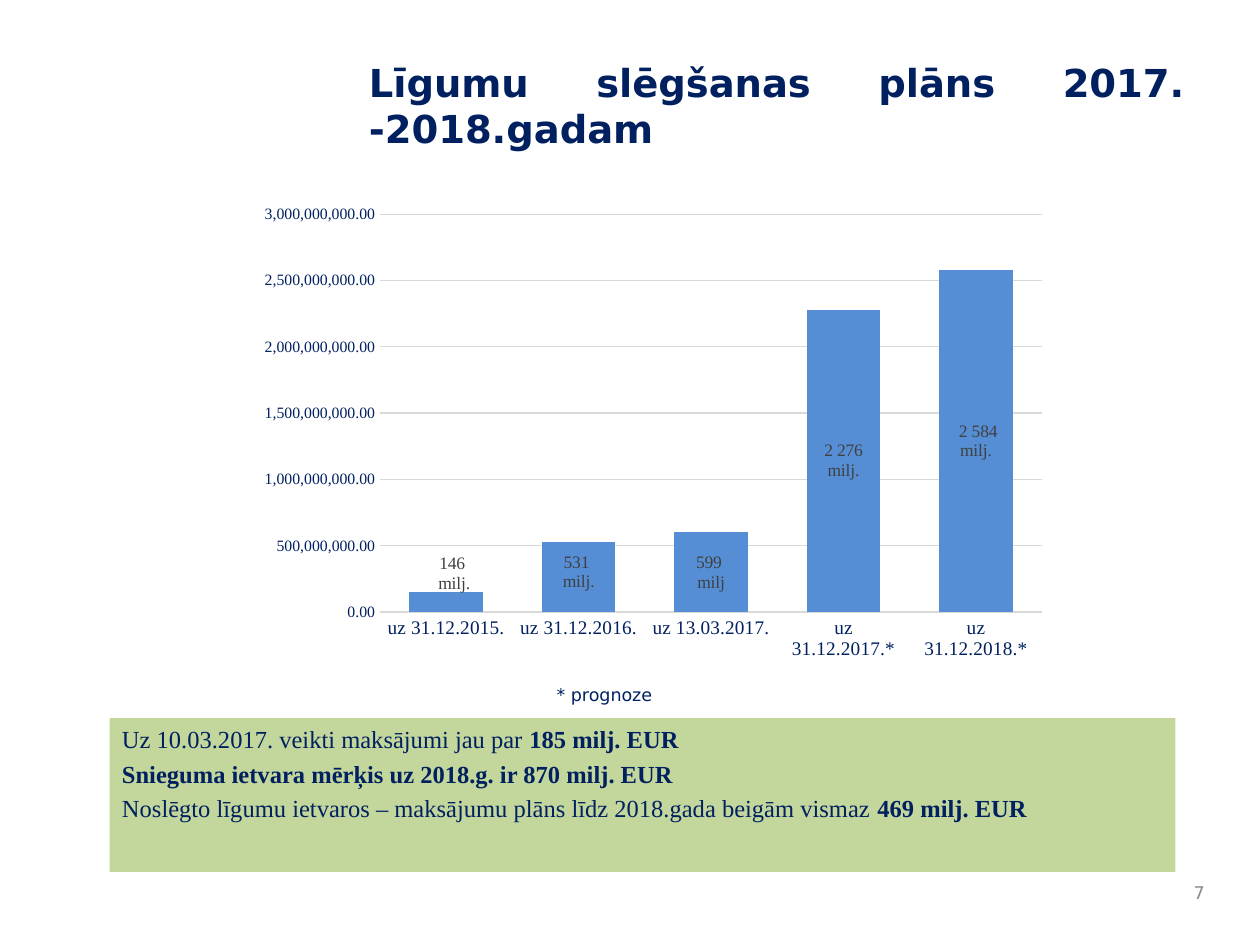
from dataclasses import dataclass
from lxml import etree
from pptx import Presentation
from pptx.chart.data import CategoryChartData
from pptx.dml.color import RGBColor
from pptx.enum.chart import XL_CHART_TYPE, XL_LABEL_POSITION, XL_TICK_MARK
from pptx.enum.shapes import MSO_SHAPE
from pptx.enum.text import MSO_ANCHOR, PP_ALIGN
from pptx.oxml.ns import qn
from pptx.util import Inches, Pt

STACKED = XL_CHART_TYPE.COLUMN_STACKED
CENTER = XL_LABEL_POSITION.CENTER
NO_TICK = XL_TICK_MARK.NONE
RECT = MSO_SHAPE.RECTANGLE
TOP, MIDDLE = MSO_ANCHOR.TOP, MSO_ANCHOR.MIDDLE
LEFT, RIGHT, JUSTIFY = PP_ALIGN.LEFT, PP_ALIGN.RIGHT, PP_ALIGN.JUSTIFY
C15 = "http://schemas.microsoft.com/office/drawing/2012/chart"
LEADER = "{CE6537A1-D6FC-4f65-9D91-7224C49458BB}"


@dataclass(frozen=True)
class Theme:
    sans: str = "DejaVu Sans"
    serif: str = "Times New Roman"
    navy: str = "002060"
    blue: str = "558ED5"
    green: str = "C3D69B"
    gray: str = "898989"
    dark: str = "404040"
    grid: str = "D9D9D9"
    title: float = 22
    body: float = 14
    label: float = 11
    small: float = 10
    tick: float = 9


class Deck:
    def __init__(self, theme):
        self.theme = theme
        self.prs = Presentation()
        self.prs.slide_width, self.prs.slide_height = Inches(10), Inches(7.5)
        self.slide = self.prs.slides.add_slide(self.prs.slide_layouts[6])

    def style(self, font, face, size, color, bold=False):
        font.name, font.size, font.bold = face, Pt(size), bold
        font.color.rgb = RGBColor.from_string(color)

    def fill(self, frame, paras, face, size, color, bold=False, align=LEFT, anchor=TOP):
        frame.word_wrap = True
        frame.vertical_anchor = anchor
        for i, runs in enumerate(paras):
            para = frame.paragraphs[0] if i == 0 else frame.add_paragraph()
            para.alignment = align
            if i:
                para.space_before = Pt(2.8)
            self.style(para.font, face, size, color, bold)
            for text, strong in runs:
                run = para.add_run()
                run.text = text
                if strong:
                    run.font.bold = True

    def text(self, box, words, size, color, **opts):
        shape = self.slide.shapes.add_textbox(*map(Inches, box))
        self.fill(shape.text_frame, [[(words, False)]], self.theme.sans, size, color, **opts)

    def panel(self, box, paras):
        t = self.theme
        shape = self.slide.shapes.add_shape(RECT, *map(Inches, box))
        shape.shadow.inherit = False
        shape.fill.solid()
        shape.fill.fore_color.rgb = RGBColor.from_string(t.green)
        shape.line.fill.background()
        self.fill(shape.text_frame, paras, t.serif, t.body, t.navy)

    def layout(self, parent, index, **parts):
        old = parent.find(qn("c:layout"))
        if old is not None:
            parent.remove(old)
        outer = etree.Element(qn("c:layout"))
        manual = etree.SubElement(outer, qn("c:manualLayout"))
        for name, value in parts.items():
            etree.SubElement(manual, qn(f"c:{name}")).set("val", str(value))
        parent.insert(index, outer)

    def leaders(self, labels):
        outer = etree.SubElement(labels, qn("c:extLst"))
        ext = etree.SubElement(outer, qn("c:ext"), nsmap={"c15": C15})
        ext.set("uri", LEADER)
        etree.SubElement(ext, f"{{{C15}}}showLeaderLines").set("val", "1")

    def axis(self, axis, size):
        t = self.theme
        axis.major_tick_mark = axis.minor_tick_mark = NO_TICK
        axis.format.line.fill.background()
        self.style(axis.tick_labels.font, t.serif, size, t.navy)

    def chart(self, box, rows, shifts):
        t = self.theme
        data = CategoryChartData()
        data.categories = [name for name, _, _ in rows]
        data.add_series("Series 1", [value * 10_000_000 for _, value, _ in rows])
        chart = self.slide.shapes.add_chart(STACKED, *map(Inches, box), data).chart
        chart.has_title = chart.has_legend = False
        chart.font.name, chart.font.size = t.serif, Pt(t.small)
        self.axis(chart.category_axis, t.label)
        axis = chart.value_axis
        self.axis(axis, t.tick)
        axis.minimum_scale, axis.maximum_scale = 0, 3_000_000_000
        axis.major_unit = 500_000_000
        axis.tick_labels.number_format = "#,##0.00"
        axis.tick_labels.number_format_is_linked = False
        line = axis.major_gridlines.format.line
        line.color.rgb = RGBColor.from_string(t.grid)
        line.width = Pt(0.75)
        plot = chart.plots[0]
        plot.gap_width, plot.overlap = 80, 100
        plot.vary_by_categories = False
        bars = plot.series[0]
        bars.format.fill.solid()
        bars.format.fill.fore_color.rgb = RGBColor.from_string(t.blue)
        for i, (_, _, words) in enumerate(rows):
            label = bars.points[i].data_label
            label.text_frame.text = words
            for para in label.text_frame.paragraphs:
                self.style(para.font, t.serif, t.small, t.dark)
            label.position = CENTER
        labels = bars.data_labels._element
        marks = labels.findall(qn("c:dLbl"))
        for i, (x, y) in shifts.items():
            self.layout(marks[i], 1, x=x, y=y)
        self.leaders(labels)
        area = chart._chartSpace.find(".//" + qn("c:plotArea"))
        self.layout(area, 0, layoutTarget="inner", xMode="edge", yMode="edge",
                    x=0.16, y=0.04, w=0.82, h=0.84)


def main():
    t = Theme()
    deck = Deck(t)
    deck.text((2.83, 0.42, 6.67, 1.13), "Līgumu slēgšanas plāns 2017. -2018.gadam",
              t.title, t.navy, bold=True, align=JUSTIFY)
    deck.text((4.32, 5.38, 2.17, 0.33), "* prognoze", t.small, t.navy)
    deck.panel((0.87, 5.7, 8.46, 1.22), [
        [("Uz 10.03.2017. veikti maksājumi jau par ", False), ("185 milj. EUR", True)],
        [("Snieguma ietvara mērķis uz 2018.g. ir 870 milj. EUR", True)],
        [("Noslēgto līgumu ietvaros – maksājumu plāns līdz 2018.gada beigām vismaz ", False),
         ("469 milj. EUR", True)],
    ])
    deck.text((9.33, 6.92, 0.33, 0.33), "7", t.small, t.gray, align=RIGHT, anchor=MIDDLE)
    deck.chart((1.99, 1.55, 6.41, 3.76), [
        ("uz 31.12.2015.", 15, "146 \nmilj."),
        ("uz 31.12.2016.", 53, "531 \nmilj."),
        ("uz 13.03.2017.", 60, "599 \nmilj"),
        ("uz 31.12.2017.*", 228, "2 276\nmilj."),
        ("uz 31.12.2018.*", 258, " 2 584\nmilj."),
    ], {0: (0.01, -0.06), 1: (0, -0.01)})
    deck.prs.save("out.pptx")


if __name__ == "__main__":
    main()
